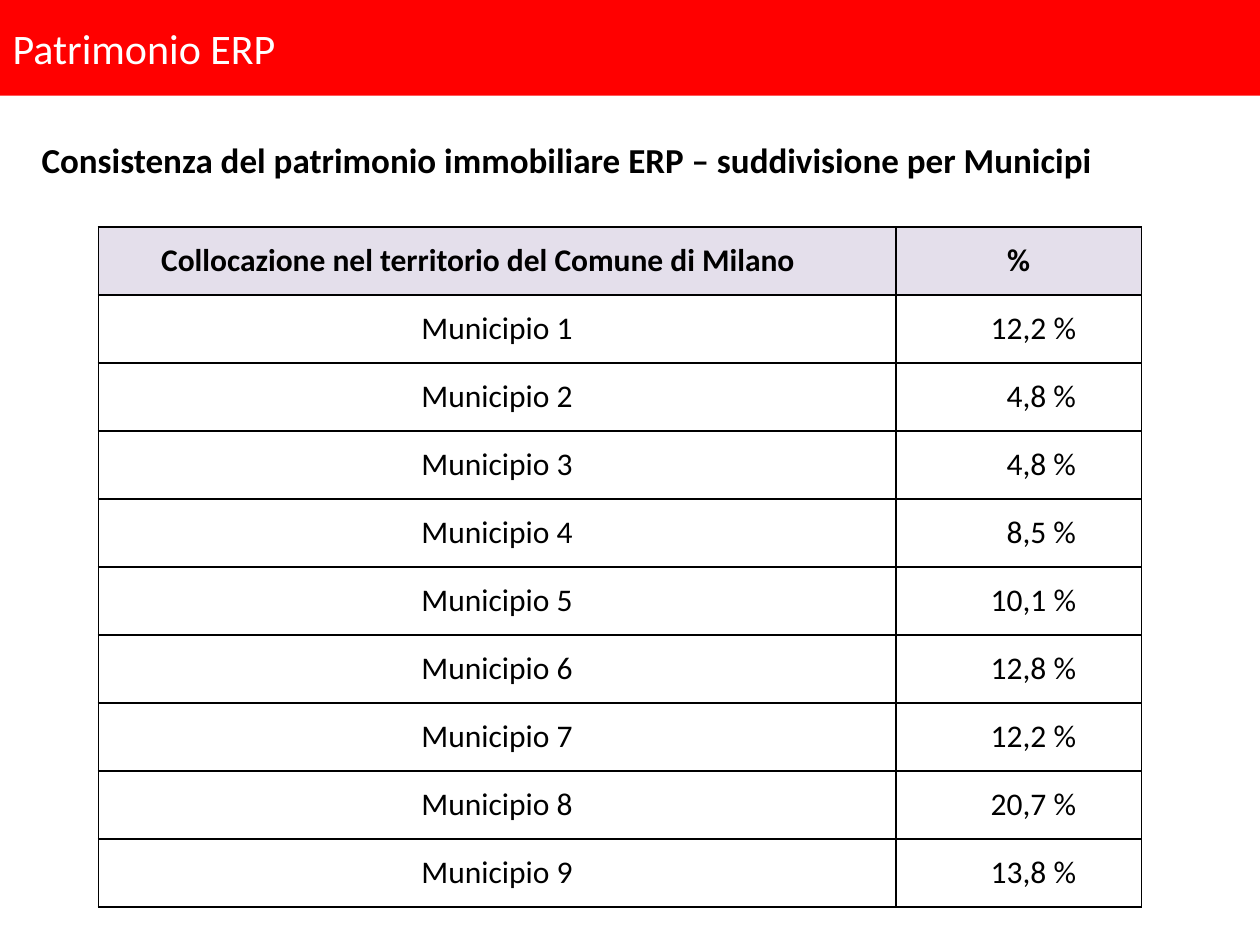
import pptx
import pptx.dml.color
import pptx.enum.text
import pptx.oxml.ns
import pptx.util
from lxml import etree
from pptx.dml.color import RGBColor
from pptx.enum.text import MSO_ANCHOR, PP_ALIGN
from pptx.util import Inches

RED = RGBColor(0xFF, 0x00, 0x00)
WHITE = RGBColor(0xFF, 0xFF, 0xFF)
BLACK = RGBColor(0x00, 0x00, 0x00)
LILAC = RGBColor(0xE4, 0xDF, 0xEB)

HEADERS = ("Collocazione nel territorio del Comune di Milano", "%")
SHARES = ("12,2", "4,8", "4,8", "8,5", "10,1", "12,8", "12,2", "20,7", "13,8")
COLUMN_WIDTHS = (6.33, 1.95)
ROW_HEIGHT = 0.54


def write_text(text_frame, text, size=18, color=BLACK, bold=False,
               align=PP_ALIGN.LEFT, space_before=0):
    paragraph = text_frame.paragraphs[0]
    paragraph.alignment = align
    paragraph.space_before = pptx.util.Pt(space_before)
    run = paragraph.add_run()
    run.text = text
    run.font.name = "Calibri"
    run.font.size = pptx.util.Pt(size)
    run.font.bold = bold
    run.font.color.rgb = color


def add_title_band(slide, text):
    title = slide.shapes.title
    title.left, title.top = Inches(0), Inches(0)
    title.width, title.height = Inches(10), Inches(0.76)
    title.fill.solid()
    title.fill.fore_color.rgb = RED
    title.text_frame.vertical_anchor = MSO_ANCHOR.MIDDLE
    write_text(title.text_frame, text, size=24, color=WHITE)


def add_subtitle(slide, text):
    box = slide.shapes.add_textbox(Inches(0.03), Inches(1.05), Inches(10), Inches(0.44))
    box.text_frame.word_wrap = True
    box.text_frame.margin_left = Inches(0.3)
    write_text(box.text_frame, text, size=20, bold=True)


def set_borders(cell):
    properties = cell._tc.get_or_add_tcPr()
    for position, side in enumerate(("lnL", "lnR", "lnT", "lnB")):
        line = etree.Element(pptx.oxml.ns.qn(f"a:{side}"), w=str(pptx.util.Pt(1)))
        fill = etree.SubElement(line, pptx.oxml.ns.qn("a:solidFill"))
        etree.SubElement(fill, pptx.oxml.ns.qn("a:srgbClr"), val=str(BLACK))
        properties.insert(position, line)


def fill_cell(cell, text, left, right, header=False, align=PP_ALIGN.CENTER):
    cell.margin_top = cell.margin_bottom = 0
    cell.margin_left, cell.margin_right = Inches(left), Inches(right)
    cell.vertical_anchor = MSO_ANCHOR.MIDDLE
    if header:
        cell.fill.solid()
        cell.fill.fore_color.rgb = LILAC
    else:
        cell.fill.background()
    set_borders(cell)
    write_text(cell.text_frame, text, bold=header, align=align, space_before=6)


def add_share_table(slide):
    row_count = len(SHARES) + 1
    table = slide.shapes.add_table(
        row_count, len(COLUMN_WIDTHS), Inches(0.78), Inches(1.8),
        Inches(sum(COLUMN_WIDTHS)), Inches(ROW_HEIGHT * row_count)).table
    table.horz_banding = False
    for column, width in zip(table.columns, COLUMN_WIDTHS):
        column.width = Inches(width)
    for row in table.rows:
        row.height = Inches(ROW_HEIGHT)
    fill_cell(table.cell(0, 0), HEADERS[0], 0.39, 0.69, header=True)
    fill_cell(table.cell(0, 1), HEADERS[1], 0.52, 0.52, header=True)
    for number, share in enumerate(SHARES, start=1):
        fill_cell(table.cell(number, 0), f"Municipio {number}", 0.69, 0.69)
        fill_cell(table.cell(number, 1), f"{share} %", 0.52, 0.52, align=PP_ALIGN.RIGHT)


def main():
    presentation = pptx.Presentation()
    presentation.slide_width = Inches(10)
    presentation.slide_height = Inches(7.5)
    slide = presentation.slides.add_slide(presentation.slide_layouts[5])
    add_title_band(slide, "Patrimonio ERP")
    add_share_table(slide)
    add_subtitle(slide, "Consistenza del patrimonio immobiliare ERP – suddivisione per Municipi")
    presentation.save("out.pptx")


if __name__ == "__main__":
    main()
